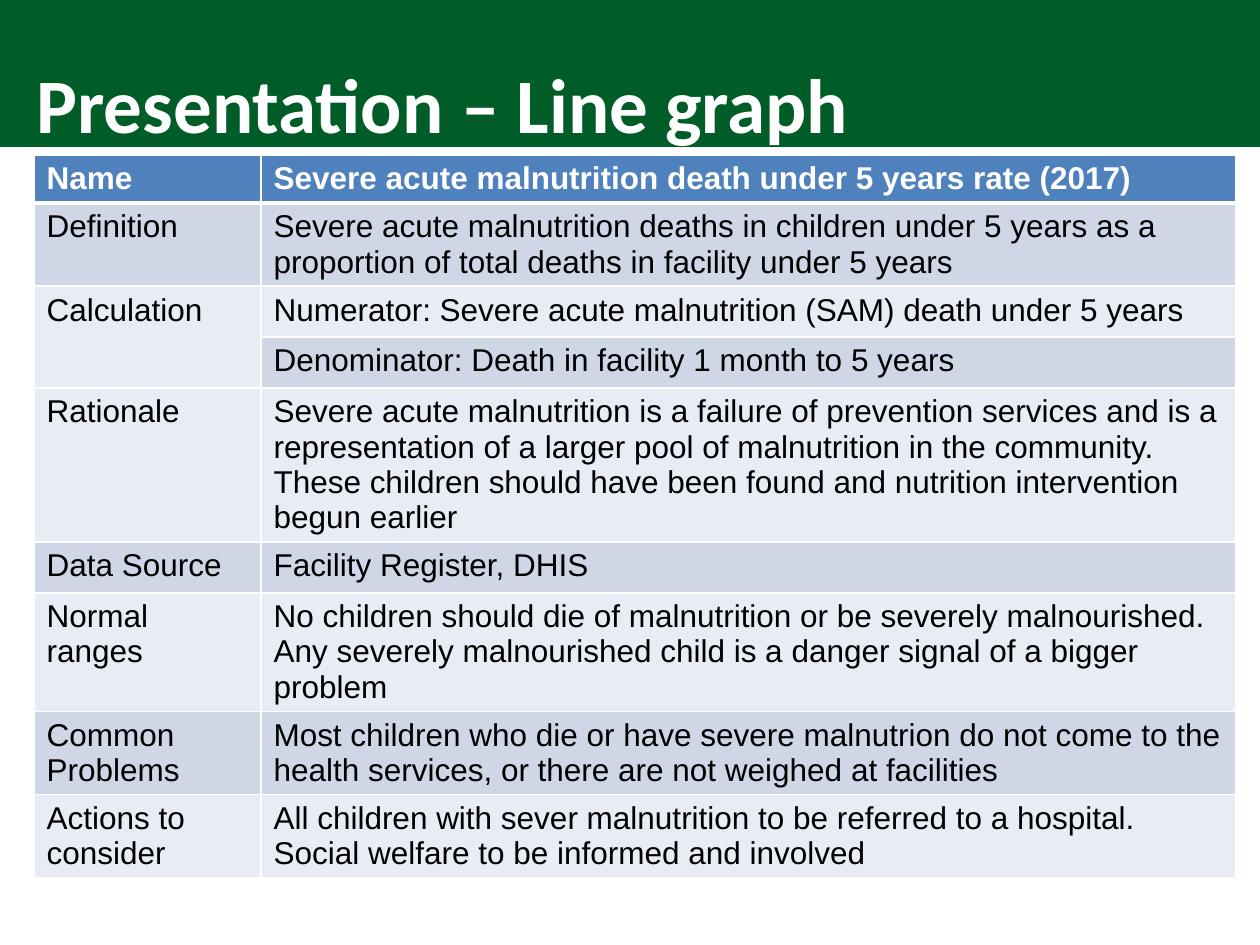
from dataclasses import dataclass

import pptx
import pptx.dml.color
import pptx.enum.shapes
import pptx.enum.text
import pptx.oxml
import pptx.oxml.ns
import pptx.util

PX_PER_INCH = 126


@dataclass(frozen=True)
class Theme:
    banner: str = "005D28"
    header: str = "4F81BD"
    bands: tuple[str, str] = ("E8ECF4", "CFD7E7")
    light: str = "FFFFFF"
    dark: str = "000000"
    title_font: str = "Calibri"
    body_font: str = "Arial"
    title_size: int = 44
    body_size: int = 18


@dataclass(frozen=True)
class Box:
    left: int
    top: int
    width: int
    height: int

    def emu(self) -> tuple[int, int, int, int]:
        return px(self.left), px(self.top), px(self.width), px(self.height)


@dataclass(frozen=True)
class Entry:
    label: str
    detail: str


THEME = Theme()
BANNER = Box(0, 0, 1260, 147)
TITLE = Box(24, 58, 1075, 97)
INDICATOR = Box(34, 155, 1202, 683)
COLUMN_WIDTHS = (227, 975)
HEADER_HEIGHT, ROW_HEIGHT = 32, 51
CALCULATION_ROWS = (2, 3)

ENTRIES = (
    Entry("Name", "Severe acute malnutrition death under 5 years rate (2017)"),
    Entry("Definition", "Severe acute malnutrition deaths in children under 5 years "
          "as a proportion of total deaths in facility under 5 years"),
    Entry("Calculation", "Numerator: Severe acute malnutrition (SAM) death under 5 years"),
    Entry("", "Denominator: Death in facility 1 month to 5 years"),
    Entry("Rationale", "Severe acute malnutrition is a failure of prevention services "
          "and is a representation of a larger pool of malnutrition in the community. "
          "These children should have been found and nutrition intervention begun earlier"),
    Entry("Data Source", "Facility Register, DHIS"),
    Entry("Normal ranges", "No children should die of malnutrition or be severely "
          "malnourished. Any severely malnourished child is a danger signal of a bigger problem"),
    Entry("Common Problems", "Most children who die or have severe malnutrion do not come "
          "to the health services, or there are not weighed at facilities"),
    Entry("Actions to consider", "All children with sever malnutrition to be referred to "
          "a hospital. Social welfare to be informed and involved"),
)


def px(length: int) -> int:
    return pptx.util.Emu(round(length * 914400 / PX_PER_INCH))


def rgb(code: str) -> pptx.dml.color.RGBColor:
    return pptx.dml.color.RGBColor.from_string(code)


def style_runs(paragraph, font: str, size: int, color: str, bold: bool) -> None:
    for run in paragraph.runs:
        run.font.name = font
        run.font.size = pptx.util.Pt(size)
        run.font.color.rgb = rgb(color)
        run.font.bold = bold


def add_borders(cell, bottom: int, top: int) -> None:
    properties = cell._tc.get_or_add_tcPr()
    for side, points in (("L", 1), ("R", 1), ("T", top), ("B", bottom)):
        properties.append(pptx.oxml.parse_xml(
            f'<a:ln{side} {pptx.oxml.ns.nsdecls("a")} w="{pptx.util.Pt(points)}">'
            f'<a:solidFill><a:srgbClr val="{THEME.light}"/></a:solidFill></a:ln{side}>'))


def fill_cell(cell, text: str, row: int) -> None:
    is_header = row == 0
    # Borders precede the fill in the cell properties
    add_borders(cell, bottom=3 if is_header else 1, top=3 if row == 1 else 1)
    cell.fill.solid()
    cell.fill.fore_color.rgb = rgb(THEME.header if is_header else THEME.bands[row % 2])
    cell.text_frame.text = text
    style_runs(cell.text_frame.paragraphs[0], THEME.body_font, THEME.body_size,
               THEME.light if is_header else THEME.dark, is_header)


def add_banner(slide) -> None:
    banner = slide.shapes.add_shape(
        pptx.enum.shapes.MSO_SHAPE.RECTANGLE, *BANNER.emu())
    banner.shadow.inherit = False
    banner.fill.solid()
    banner.fill.fore_color.rgb = rgb(THEME.banner)
    banner.line.fill.background()


def add_indicator_table(slide) -> None:
    frame = slide.shapes.add_table(len(ENTRIES), len(COLUMN_WIDTHS), *INDICATOR.emu())
    indicator = frame.table
    for column, width in zip(indicator.columns, COLUMN_WIDTHS):
        column.width = px(width)
    for row, entry in enumerate(ENTRIES):
        indicator.rows[row].height = px(ROW_HEIGHT if row else HEADER_HEIGHT)
        for column, text in enumerate((entry.label, entry.detail)):
            fill_cell(indicator.cell(row, column), text, row)
    first, last = CALCULATION_ROWS
    indicator.cell(first, 0).merge(indicator.cell(last, 0))
    frame.height = px(INDICATOR.height)


def add_title(slide) -> None:
    title = slide.shapes.add_textbox(*TITLE.emu()).text_frame
    title.word_wrap = True
    title.vertical_anchor = pptx.enum.text.MSO_ANCHOR.BOTTOM
    title.text = "Presentation – Line graph"
    heading = title.paragraphs[0]
    heading.line_spacing = 0.85
    style_runs(heading, THEME.title_font, THEME.title_size, THEME.light, True)


def main() -> None:
    deck = pptx.Presentation()
    deck.slide_width, deck.slide_height = px(1260), px(945)
    slide = deck.slides.add_slide(deck.slide_layouts[6])
    add_banner(slide)
    add_indicator_table(slide)
    add_title(slide)
    deck.save("out.pptx")


if __name__ == "__main__":
    main()
